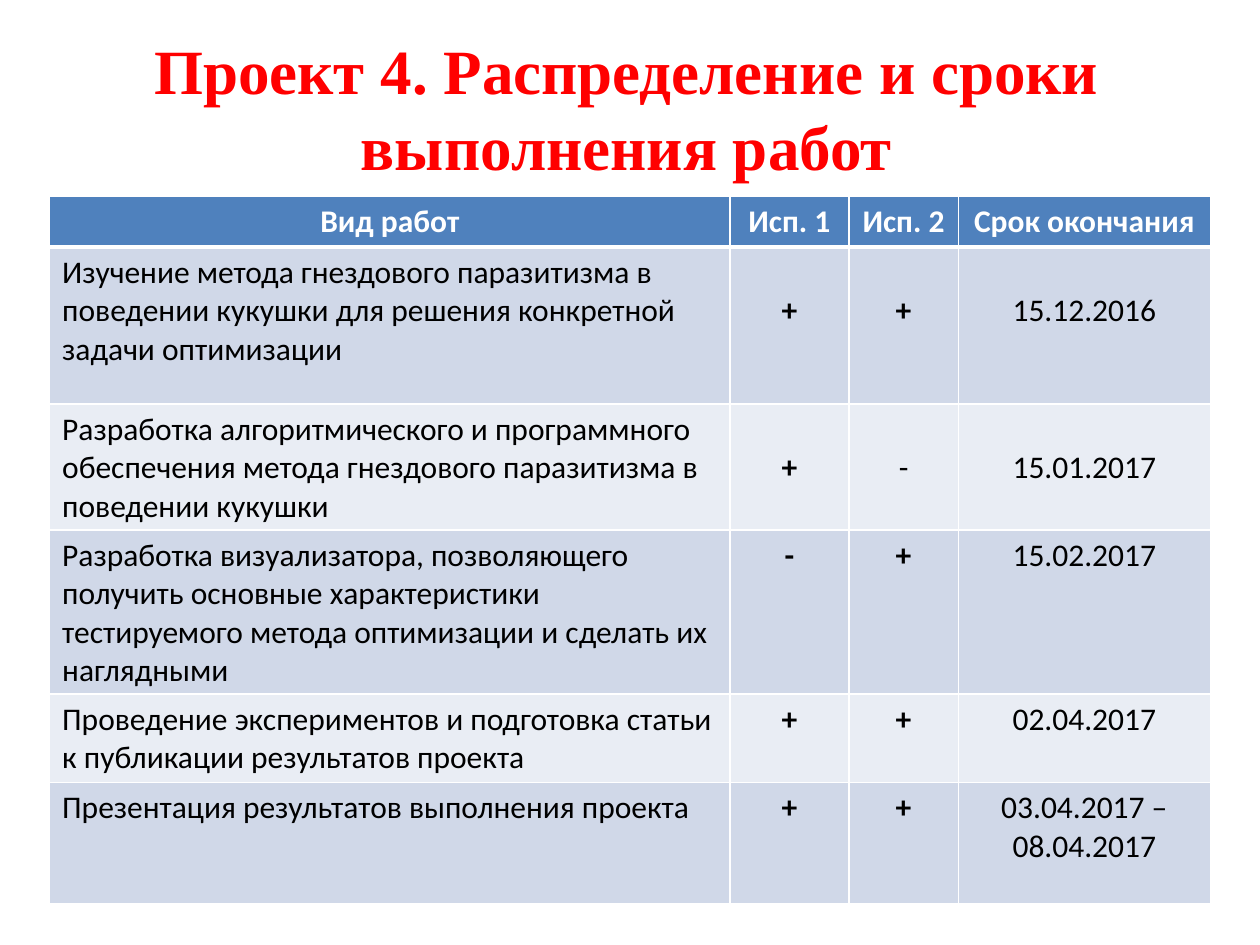
from pptx import Presentation
from pptx.dml.color import RGBColor
from pptx.enum.text import MSO_ANCHOR, PP_ALIGN
from pptx.oxml import parse_xml
from pptx.oxml.ns import nsdecls
from pptx.util import Cm, Pt

RED = RGBColor(0xFF, 0x00, 0x00)
BLACK = RGBColor(0x00, 0x00, 0x00)
WHITE = RGBColor(0xFF, 0xFF, 0xFF)
BLUE = RGBColor(0x4F, 0x81, 0xBD)
BAND_DARK = RGBColor(0xD0, 0xD8, 0xE8)
BAND_LIGHT = RGBColor(0xE9, 0xED, 0xF4)

ROWS = [
    ("Вид работ", "Исп. 1", "Исп. 2", "Срок окончания"),
    ("Изучение метода гнездового паразитизма в поведении кукушки для решения "
     "конкретной задачи оптимизации", "+", "+", "15.12.2016"),
    ("Разработка алгоритмического и программного обеспечения метода гнездового "
     "паразитизма в поведении кукушки", "+", "-", "15.01.2017"),
    ("Разработка визуализатора, позволяющего получить основные характеристики "
     "тестируемого метода оптимизации и сделать их наглядными", "-", "+", "15.02.2017"),
    ("Проведение экспериментов и подготовка статьи к публикации результатов проекта",
     "+", "+", "02.04.2017"),
    ("Презентация результатов выполнения проекта", "+", "+", "03.04.2017 – 08.04.2017"),
]
COL_WIDTHS = [13.72, 2.39, 2.21, 5.08]
ROW_HEIGHTS = [0.99, 3.17, 2.44, 3.17, 1.7, 2.44]
LOWERED_ROWS = (1, 2)


def add_run(p, text, font, size, color, bold):
    r = p.add_run()
    r.text = text
    r.font.name = font
    r.font.size = Pt(size)
    r.font.color.rgb = color
    r.font.bold = bold


def set_borders(cell, bottom):
    tcPr = cell._tc.get_or_add_tcPr()
    widths = {"lnL": 1, "lnR": 1, "lnT": 1, "lnB": bottom}
    for i, (tag, width) in enumerate(widths.items()):
        tcPr.insert(i, parse_xml(
            f'<a:{tag} {nsdecls("a")} w="{Pt(width)}"><a:solidFill>'
            f'<a:srgbClr val="{WHITE}"/></a:solidFill></a:{tag}>'))


prs = Presentation()
prs.slide_width = Cm(25.4)
prs.slide_height = Cm(19.05)
s = prs.slides.add_slide(prs.slide_layouts[6])

title = s.shapes.add_textbox(Cm(1.2), Cm(0.58), Cm(22.86), Cm(3.18))
tf = title.text_frame
tf.word_wrap = True
tf.vertical_anchor = MSO_ANCHOR.MIDDLE
p = tf.paragraphs[0]
p.alignment = PP_ALIGN.CENTER
add_run(p, "Проект 4. Распределение и сроки выполнения работ",
        "Times New Roman", 36, RED, True)

table = s.shapes.add_table(len(ROWS), len(COL_WIDTHS), Cm(1), Cm(3.96),
                           Cm(sum(COL_WIDTHS)), Cm(sum(ROW_HEIGHTS))).table
for col, width in zip(table.columns, COL_WIDTHS):
    col.width = Cm(width)

for i, (texts, height) in enumerate(zip(ROWS, ROW_HEIGHTS)):
    table.rows[i].height = Cm(height)
    header = i == 0
    band = BAND_DARK if i % 2 else BAND_LIGHT
    for j, text in enumerate(texts):
        cell = table.cell(i, j)
        cell.fill.solid()
        cell.fill.fore_color.rgb = BLUE if header else band
        set_borders(cell, 3 if header else 1)
        if i in LOWERED_ROWS and j > 0:
            cell.margin_top = Cm(0.9)
        p = cell.text_frame.paragraphs[0]
        p.alignment = PP_ALIGN.CENTER if header or j > 0 else PP_ALIGN.LEFT
        bold = header or (j in (1, 2) and (i, j) != (2, 2))
        add_run(p, text, "Calibri", 18, WHITE if header else BLACK, bold)

prs.save("out.pptx")
